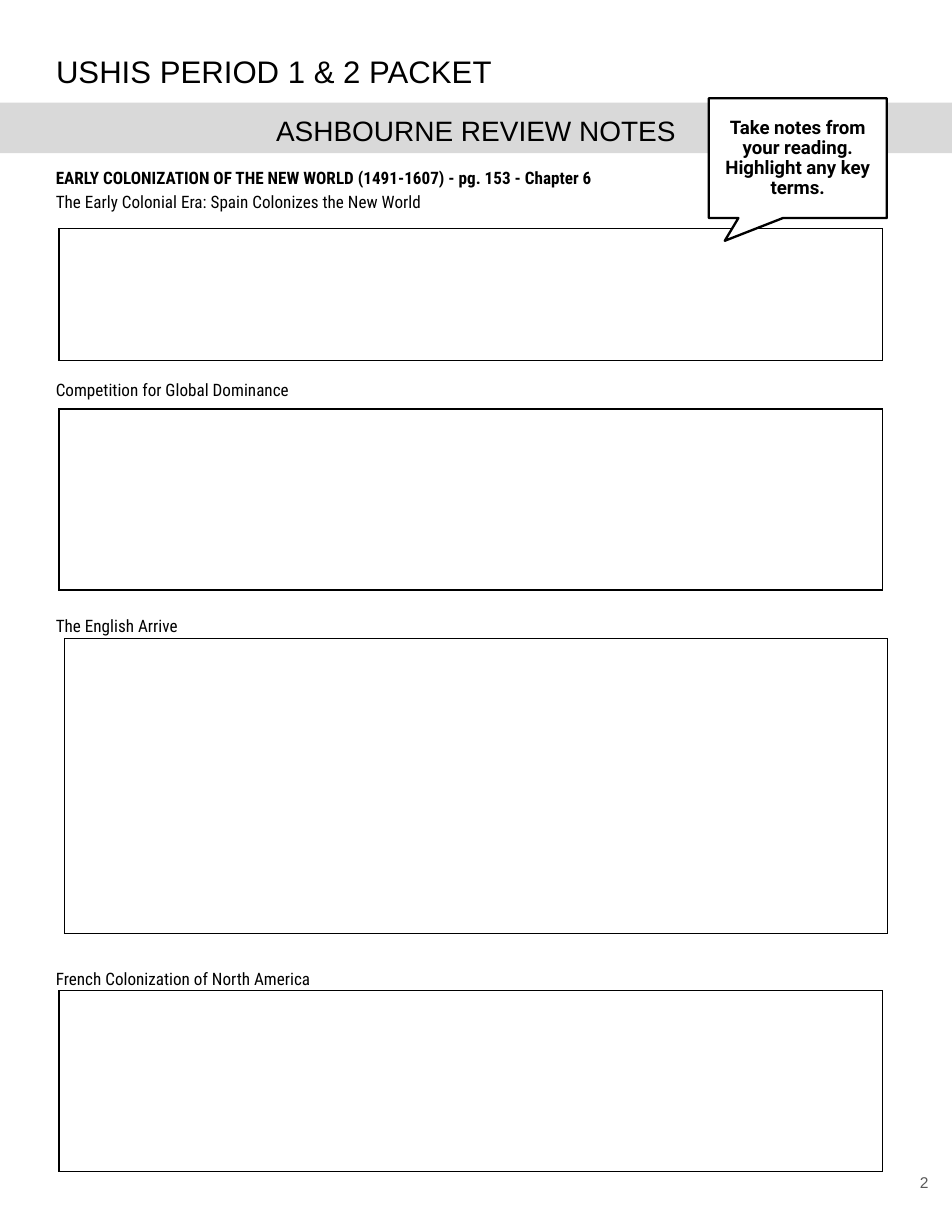
"""Build a reading-notes worksheet page with four framed answer areas."""
import pptx
import pptx.dml.color
import pptx.enum.shapes
import pptx.enum.text
import pptx.oxml
import pptx.oxml.ns
import pptx.util

Pt = pptx.util.Pt
ALIGN = pptx.enum.text.PP_ALIGN
ANCHOR = pptx.enum.text.MSO_ANCHOR
SHAPE = pptx.enum.shapes.MSO_SHAPE


def color(value):
    return pptx.dml.color.RGBColor.from_string(value)


class Page:
    ink = "000000"
    paper = "FFFFFF"
    inset = 7.2

    def __init__(self, s):
        self.s = s

    def frame(self, tf, anchor=ANCHOR.TOP):
        tf.word_wrap = True
        tf.vertical_anchor = anchor
        tf.margin_left = tf.margin_right = Pt(self.inset)
        tf.margin_top = tf.margin_bottom = Pt(self.inset)

    def style(self, p, size, font="Arial", ink=ink, bold=False, align=ALIGN.LEFT, spacing=1.0):
        p.alignment = align
        p.line_spacing = spacing
        for r in p.runs:
            r.font.size = Pt(size)
            r.font.name = font
            r.font.bold = bold
            r.font.color.rgb = color(ink)

    def title(self, text, x, y, w, h, size):
        sp = self.s.shapes.title
        sp.left, sp.top, sp.width, sp.height = Pt(x), Pt(y), Pt(w), Pt(h)
        tf = sp.text_frame
        tf.text = text
        self.frame(tf)
        tf.auto_size = pptx.enum.text.MSO_AUTO_SIZE.SHAPE_TO_FIT_TEXT
        self.style(tf.paragraphs[0], size)

    def headings(self, items, x, y, w, h, line=15.13):
        tf = self.s.shapes.add_textbox(Pt(x), Pt(y), Pt(w), Pt(h)).text_frame
        self.frame(tf)
        tf.text = "\n".join(text for text, lines in items)
        for i, (p, (text, lines)) in enumerate(zip(tf.paragraphs, items)):
            self.style(p, 11, "Roboto Condensed", bold=i == 0, spacing=1.15)
            p.space_before = Pt(lines * line)

    def shape(self, kind, text, x, y, w, h, fill=paper, line=None, anchor=ANCHOR.TOP, **style):
        sp = self.s.shapes.add_shape(kind, Pt(x), Pt(y), Pt(w), Pt(h))
        sp.shadow.inherit = False
        sp.fill.solid()
        sp.fill.fore_color.rgb = color(fill)
        if line:
            sp.line.color.rgb = color(self.ink)
            sp.line.width = Pt(line)
        else:
            sp.line.fill.background()
        tf = sp.text_frame
        tf.text = text
        self.frame(tf, anchor)
        self.style(tf.paragraphs[0], **style)
        return sp

    def answer_box(self, x, y, w, h):
        table = self.s.shapes.add_table(1, 1, Pt(x), Pt(y), Pt(w), Pt(h)).table
        table.first_row = table.horz_banding = False
        cell = table.cell(0, 0)
        tcPr = cell._tc.get_or_add_tcPr()
        for side in "LRTB":
            tcPr.append(pptx.oxml.parse_xml(
                f'<a:ln{side} {pptx.oxml.ns.nsdecls("a")} w="{Pt(1)}"><a:solidFill>'
                f'<a:srgbClr val="{self.ink}"/></a:solidFill></a:ln{side}>'))
        cell.fill.solid()
        cell.fill.fore_color.rgb = color(self.paper)


def main():
    prs = pptx.Presentation()
    prs.slide_width, prs.slide_height = Pt(612), Pt(792)
    page = Page(prs.slides.add_slide(prs.slide_layouts[5]))

    page.title("USHIS PERIOD 1 & 2 PACKET", 28.8, 26.6, 465, 38.9, 20)
    page.headings([
        ("EARLY COLONIZATION OF THE NEW WORLD (1491-1607) - pg. 153 - Chapter 6", 0),
        ("The Early Colonial Era: Spain Colonizes the New World", 0),
        ("Competition for Global Dominance", 7),
        ("The English Arrive", 9),
        ("French Colonization of North America", 14),
    ], 28.8, 98.6, 583.2, 681)
    page.shape(SHAPE.RECTANGLE, "2", 567.2, 730, 36.7, 60.5, anchor=ANCHOR.MIDDLE,
               size=10, ink="595959", align=ALIGN.RIGHT)
    page.shape(SHAPE.RECTANGLE, "ASHBOURNE REVIEW NOTES", 0, 66, 612, 32.4,
               fill="D9D9D9", size=18, align=ALIGN.CENTER)

    for x, y, h in [(38, 146.9, 85), (38, 263, 116.4),
                    (41.5, 410.6, 189.4), (38, 636.9, 116.4)]:
        page.answer_box(x, y, 529.2, h)

    callout = page.shape(
        SHAPE.RECTANGULAR_CALLOUT, "Take notes from your reading. Highlight any key terms.",
        455.6, 63.2, 114.5, 77, line=1.5, anchor=ANCHOR.MIDDLE,
        size=12, font="Roboto", bold=True, align=ALIGN.CENTER, spacing=0.9)
    callout.adjustments[0] = -0.41
    callout.adjustments[1] = 0.69
    prs.save("out.pptx")


if __name__ == "__main__":
    main()
